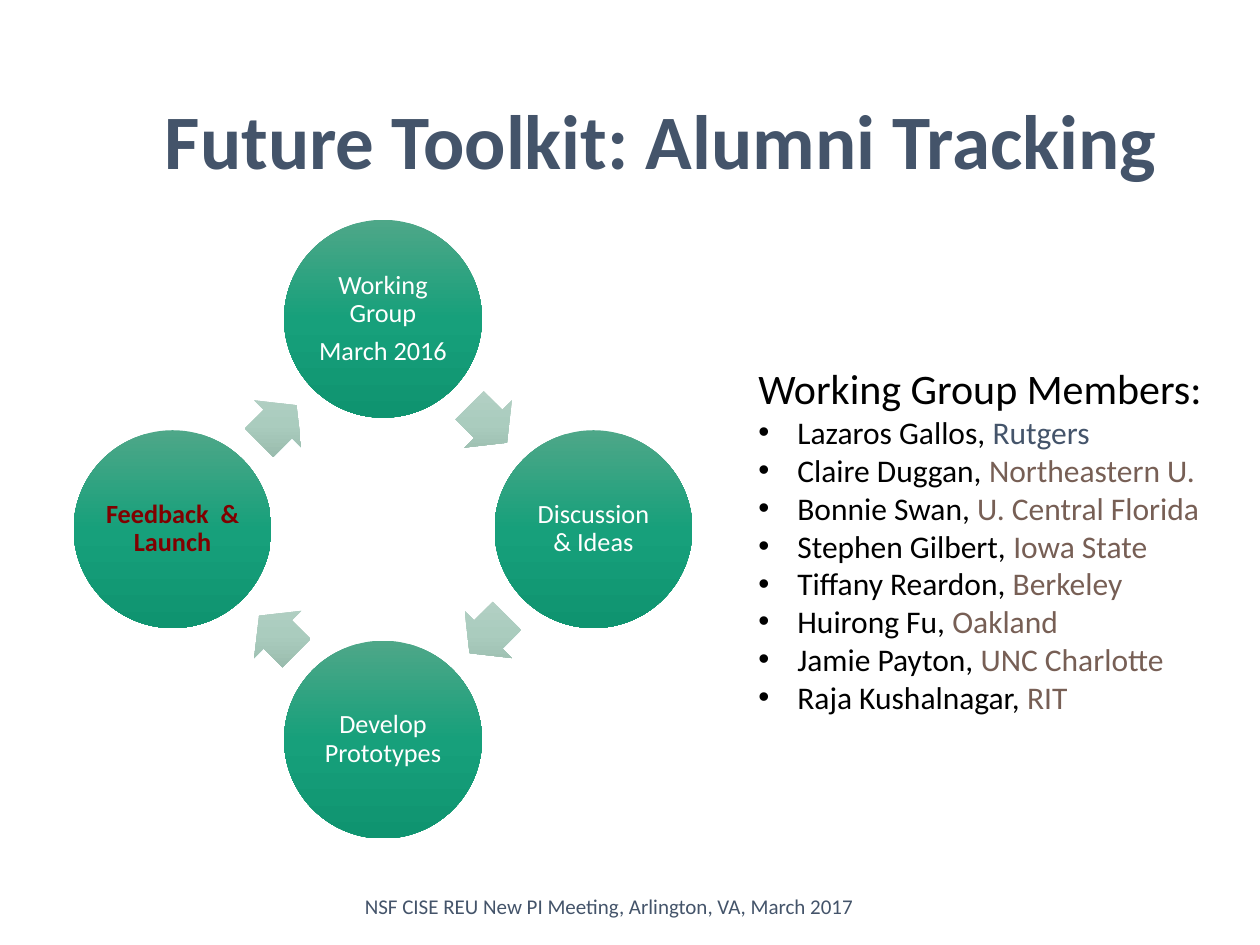
import math
from lxml import etree
from pptx import Presentation
from pptx import util as u
from pptx.dml.color import RGBColor
from pptx.enum import shapes, text
from pptx.oxml import parse_xml
from pptx.oxml.ns import nsdecls, qn

TITLE = "Future Toolkit: Alumni Tracking"
FOOTER = "NSF CISE REU New PI Meeting, Arlington, VA, March 2017"
STEPS = [
    (["Working Group", "March 2016"], "FFFFFF", False),
    (["Discussion & Ideas"], "FFFFFF", False),
    (["Develop Prototypes"], "FFFFFF", False),
    (["Feedback  & Launch"], "800000", True),
]
MEMBERS_HEADING = "Working Group Members:"
MEMBERS = [
    ("Lazaros Gallos", "Rutgers", "44546A"),
    ("Claire Duggan", "Northeastern U.", "775F55"),
    ("Bonnie Swan", "U. Central Florida", "775F55"),
    ("Stephen Gilbert", "Iowa State", "775F55"),
    ("Tiffany Reardon", "Berkeley", "775F55"),
    ("Huirong Fu", "Oakland", "775F55"),
    ("Jamie Payton", "UNC Charlotte", "775F55"),
    ("Raja Kushalnagar", "RIT", "775F55"),
]
SLATE = "44546A"
STEP_GRADIENT = ["4EA788", "17A07B", "0F9470"]
ARROW_GRADIENT = ["B6D1C6", "AACCBE", "95B7A9"]
CENTER_X, CENTER_Y, RADIUS = 3.04, 4.2, 1.67
DIAMETER = 1.57
ARROW_W, ARROW_H = 0.42, 0.53


def style(run, size, color, bold=False):
    run.font.name = "Calibri"
    run.font.size = u.Pt(size)
    run.font.bold = bold
    run.font.color.rgb = RGBColor.from_string(color)


def add_text(slide, left, top, width, height, content=""):
    box = slide.shapes.add_textbox(*map(u.Inches, (left, top, width, height)))
    frame = box.text_frame
    frame.word_wrap = True
    frame.text = content
    return frame


def add_gradient_shape(slide, kind, angle, reach, width, height, colors):
    x = CENTER_X + reach * math.sin(math.radians(angle))
    y = CENTER_Y - reach * math.cos(math.radians(angle))
    shape = slide.shapes.add_shape(
        kind, *map(u.Inches, (x - width / 2, y - height / 2, width, height)))
    shape.shadow.inherit = False
    shape.line.fill.background()
    stops = "".join(
        f'<a:gs pos="{i * 50000}"><a:srgbClr val="{color}"/></a:gs>'
        for i, color in enumerate(colors))
    gradient = parse_xml(
        f'<a:gradFill {nsdecls("a")} rotWithShape="0"><a:gsLst>{stops}</a:gsLst>'
        '<a:lin ang="5400000" scaled="0"/></a:gradFill>')
    shape.element.spPr.find(qn("a:prstGeom")).addnext(gradient)
    return shape


def add_step(slide, angle, lines, color, bold):
    circle = add_gradient_shape(slide, shapes.MSO_SHAPE.OVAL, angle, RADIUS,
                                DIAMETER, DIAMETER, STEP_GRADIENT)
    frame = circle.text_frame
    frame.word_wrap = True
    frame.vertical_anchor = text.MSO_ANCHOR.MIDDLE
    frame.margin_left = frame.margin_right = u.Inches(0.02)
    frame.margin_top = frame.margin_bottom = u.Inches(0.02)
    frame.text = "\n".join(lines)
    for line in frame.paragraphs:
        line.alignment = text.PP_ALIGN.CENTER
        line.line_spacing = 0.9
        line.space_after = u.Pt(5.5)
        style(line.runs[0], 15, color, bold)


def add_arrow(slide, angle):
    arrow = add_gradient_shape(slide, shapes.MSO_SHAPE.RIGHT_ARROW, angle,
                               RADIUS / math.sqrt(2), ARROW_W, ARROW_H,
                               ARROW_GRADIENT)
    arrow.adjustments[0], arrow.adjustments[1] = 0.6, 0.5
    arrow.rotation = angle


def add_members(slide):
    frame = add_text(slide, 5.92, 2.83, 3.92, 2.93, MEMBERS_HEADING)
    style(frame.paragraphs[0].runs[0], 24, "000000")
    indent = u.Inches(0.31)
    for name, school, color in MEMBERS:
        member = frame.add_paragraph()
        for words, shade in ((name + ", ", "000000"), (school, color)):
            run = member.add_run()
            run.text = words
            style(run, 18, shade)
        props = member._p.get_or_add_pPr()
        props.set("marL", str(indent))
        props.set("indent", str(-indent))
        etree.SubElement(props, qn("a:buFont")).set("typeface", "Arial")
        etree.SubElement(props, qn("a:buChar")).set("char", "•")


def main():
    deck = Presentation()
    deck.slide_width, deck.slide_height = u.Inches(10), u.Inches(7.5)
    slide = deck.slides.add_slide(deck.slide_layouts[6])

    title = add_text(slide, 1.21, 0.42, 8.62, 1.45, TITLE)
    title.vertical_anchor = text.MSO_ANCHOR.MIDDLE
    title.paragraphs[0].line_spacing = 0.9
    style(title.paragraphs[0].runs[0], 44, SLATE, True)

    turn = 360 / len(STEPS)
    for i, (lines, color, bold) in enumerate(STEPS):
        add_step(slide, i * turn, lines, color, bold)
        add_arrow(slide, (i + 0.5) * turn)

    add_members(slide)

    footer = add_text(slide, 1.92, 7, 5.83, 0.38, FOOTER)
    footer.vertical_anchor = text.MSO_ANCHOR.MIDDLE
    footer.paragraphs[0].alignment = text.PP_ALIGN.CENTER
    style(footer.paragraphs[0].runs[0], 12, SLATE)

    deck.save("out.pptx")


if __name__ == "__main__":
    main()
